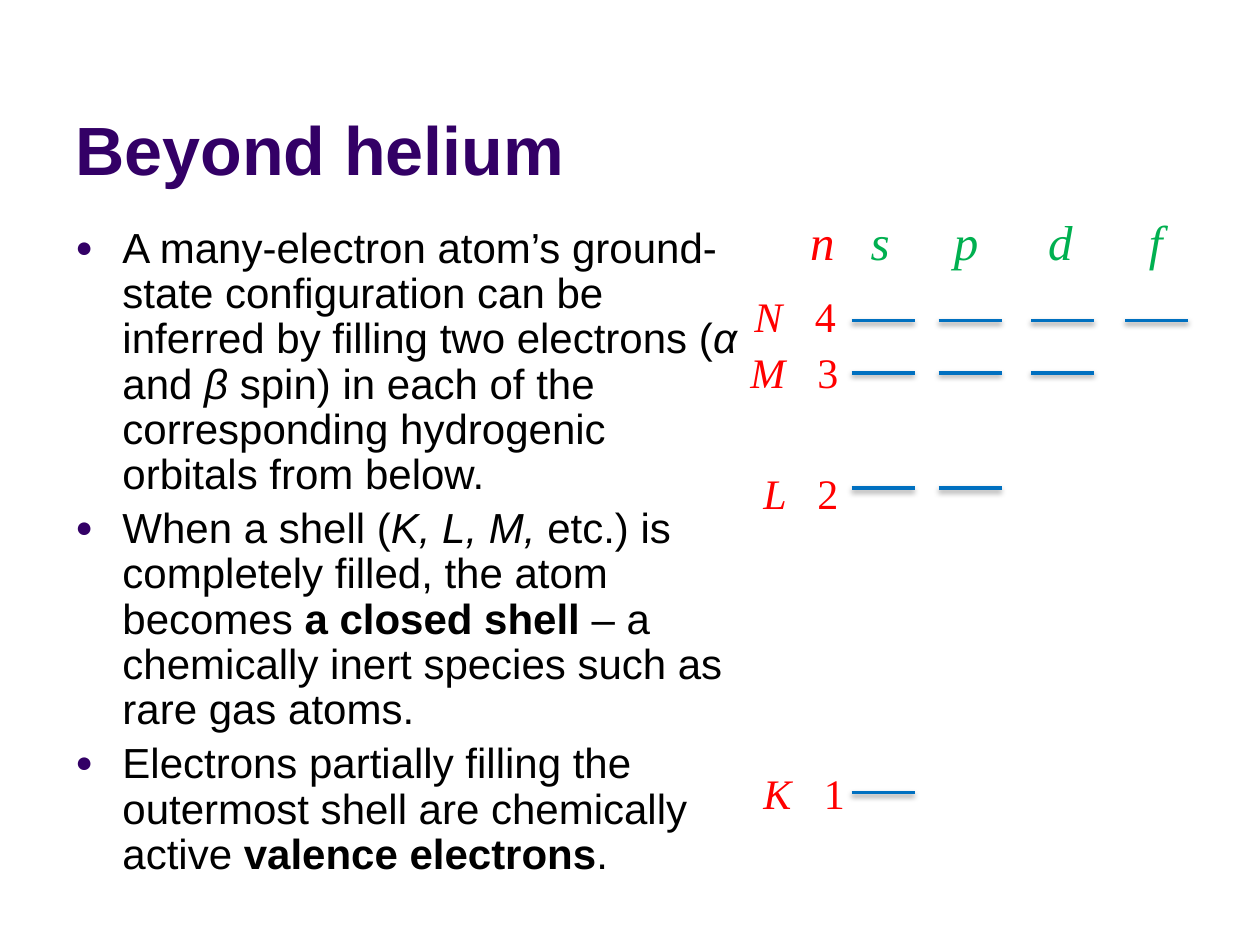
from lxml.etree import SubElement
from pptx import Presentation
from pptx.dml.color import RGBColor
from pptx.enum.shapes import MSO_CONNECTOR as Connector
from pptx.enum.text import MSO_ANCHOR as Anchor
from pptx.oxml.ns import qn
from pptx.util import Cm, Pt

COLORS = {
    "title": "330066",
    "body": "000000",
    "shell": "FF0000",
    "subshell": "00B050",
    "orbital": "0070C0",
    "shadow": "000000",
}

TITLE = "Beyond helium"
BULLETS = [
    [("A many-electron atom’s ground-state configuration can be inferred by filling two electrons (", ""),
     ("α", "i"), (" and ", ""), ("β", "i"),
     (" spin) in each of the corresponding hydrogenic orbitals from below.", "")],
    [("When a shell (", ""), ("K, L, M, ", "i"),
     ("etc.) is completely filled, the atom becomes ", ""), ("a closed shell", "b"),
     (" – a chemically inert species such as rare gas atoms.", "")],
    [("Electrons partially filling the outermost shell are chemically active ", ""),
     ("valence electrons", "b"), (".", "")],
]
SUBSHELLS = ["s", "p", "d", "f"]
SUBSHELL_TABS = [1.22, 2.9, 4.8, 6.83]
ORBITAL_LEFTS = [17.17, 18.92, 20.78, 22.68]
ORBITAL_LENGTH = 1.27
SHELLS = [
    {"name": "N", "number": 4, "label": (14.96, 5.74, 2.16), "level": 6.46},
    {"name": "M", "number": 3, "label": (14.88, 6.86, 2.29), "level": 7.52},
    {"name": "L", "number": 2, "label": (15.14, 9.3, 2.03), "level": 9.84},
    {"name": "K", "number": 1, "label": (15.14, 15.34, 2.16), "level": 15.98},
]
LABEL_HEIGHT = 1.27
NUMBER_INSET = 0.94


def add_text(slide, box, paragraphs, size, font="Arial", color="body",
             anchor=Anchor.TOP, bulleted=False, tabs=()):
    shape = slide.shapes.add_textbox(*map(Cm, box))
    frame = shape.text_frame
    frame.word_wrap = True
    frame.vertical_anchor = anchor
    if tabs:
        frame.margin_right = 0
    for index, runs in enumerate(paragraphs):
        paragraph = frame.add_paragraph() if index else frame.paragraphs[0]
        if bulleted:
            add_bullet(paragraph, size)
        if tabs:
            tab_list = SubElement(paragraph._p.get_or_add_pPr(), qn("a:tabLst"))
            for position in tabs:
                SubElement(tab_list, qn("a:tab"), pos=str(Cm(position)), algn="l")
        for text, style, *run_color in runs:
            run = paragraph.add_run()
            run.text = text
            run.font.name = font
            run.font.size = Pt(size)
            run.font.bold = "b" in style
            run.font.italic = "i" in style
            run.font.color.rgb = RGBColor.from_string(COLORS[(run_color or [color])[0]])


def add_bullet(paragraph, size):
    paragraph.line_spacing = 0.9
    paragraph.space_before = Pt(0.2 * size)
    properties = paragraph._p.get_or_add_pPr()
    indent = Cm(0.95)
    properties.set("marL", str(indent))
    properties.set("indent", str(-indent))
    bullet_color = SubElement(properties, qn("a:buClr"))
    SubElement(bullet_color, qn("a:srgbClr"), val=COLORS["title"])
    SubElement(properties, qn("a:buSzPct"), val="70000")
    SubElement(properties, qn("a:buFont"), typeface="Arial")
    SubElement(properties, qn("a:buChar"), char="●")


def add_orbital(slide, left, level):
    line = slide.shapes.add_connector(
        Connector.STRAIGHT, Cm(left), Cm(level), Cm(left + ORBITAL_LENGTH), Cm(level))
    line.line.color.rgb = RGBColor.from_string(COLORS["orbital"])
    line.line.width = Pt(2)
    effects = SubElement(line._element.spPr, qn("a:effectLst"))
    shadow = SubElement(effects, qn("a:outerShdw"), blurRad=str(Pt(3.1)),
                        dist=str(Pt(1.6)), dir="5400000", rotWithShape="0")
    shadow_color = SubElement(shadow, qn("a:srgbClr"), val=COLORS["shadow"])
    SubElement(shadow_color, qn("a:alpha"), val="38000")


def main():
    presentation = Presentation()
    presentation.slide_width, presentation.slide_height = Cm(25.4), Cm(19.05)
    slide = presentation.slides.add_slide(presentation.slide_layouts[6])

    add_text(slide, (1.27, 0.33, 22.86, 3.61), [[(TITLE, "b")]], 39,
             color="title", anchor=Anchor.BOTTOM)
    add_text(slide, (1.27, 4.45, 14.07, 13.44), BULLETS, 24, bulleted=True)

    for shell in SHELLS:
        for left in ORBITAL_LEFTS[:shell["number"]]:
            add_orbital(slide, left, shell["level"])
        width = shell["label"][2]
        add_text(slide, (*shell["label"], LABEL_HEIGHT),
                 [[(shell["name"] + "\t", "i"), (str(shell["number"]), "")]], 24,
                 font="Times New Roman", color="shell", tabs=[width - NUMBER_INSET])

    header = [("n", "i", "shell")] + [("\t" + name, "i") for name in SUBSHELLS]
    add_text(slide, (16.08, 4.14, 7.67, 1.45), [header], 28,
             font="Times New Roman", color="subshell", tabs=SUBSHELL_TABS)

    presentation.save("out.pptx")


if __name__ == "__main__":
    main()
